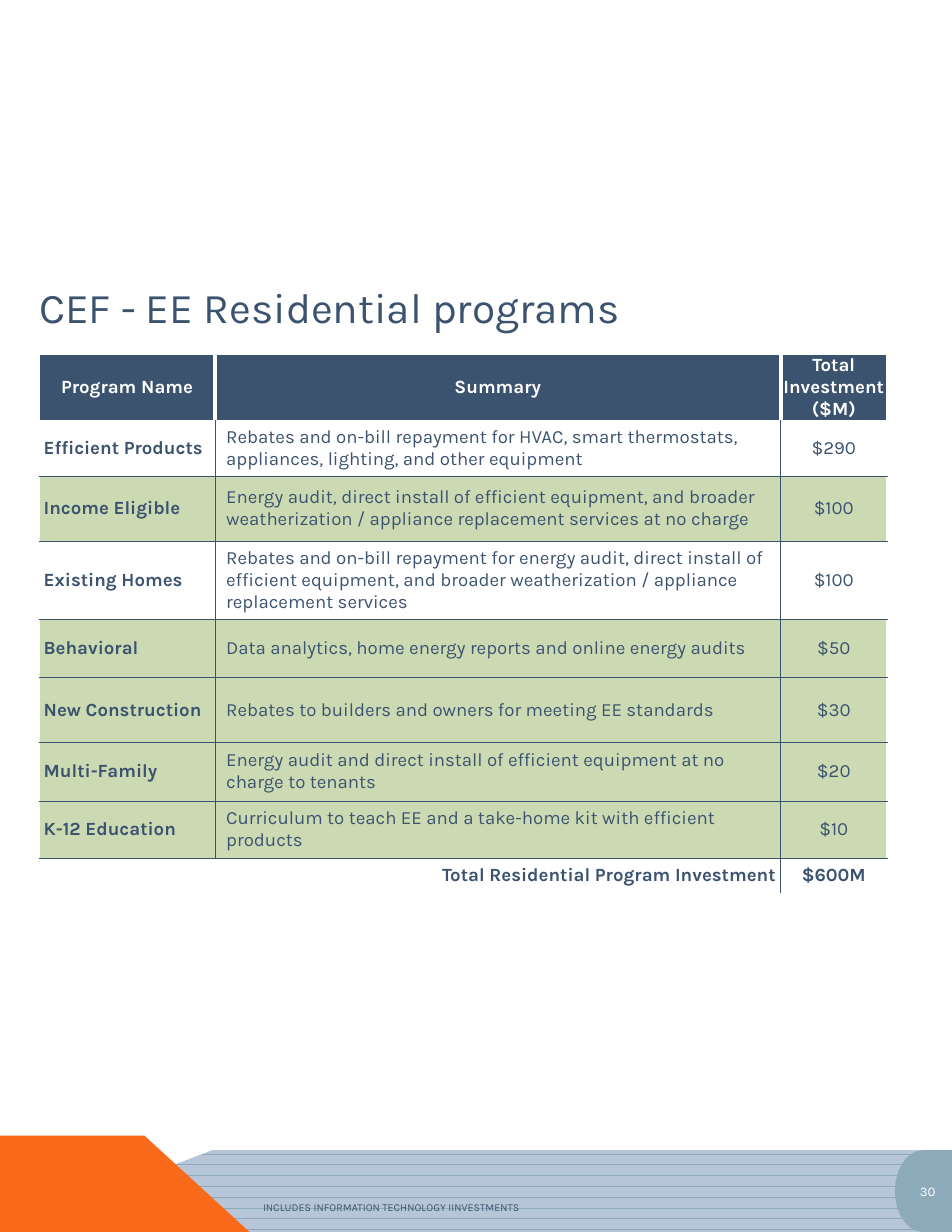
from lxml.etree import SubElement
from pptx import Presentation
from pptx.dml.color import RGBColor
from pptx.enum.dml import MSO_PATTERN
from pptx.enum.shapes import MSO_SHAPE
from pptx.enum.text import MSO_ANCHOR, PP_ALIGN
from pptx.oxml.ns import qn
from pptx.util import Inches, Pt

NAVY, WHITE, GREEN = "3C536F", "FFFFFF", "CCDAB3"
ORANGE, TEAL, PALE_BLUE = "F96A1B", "8CAABA", "B6C5D7"
LEFT, CENTER, RIGHT = PP_ALIGN.LEFT, PP_ALIGN.CENTER, PP_ALIGN.RIGHT


def color(hex_value):
    return RGBColor.from_string(hex_value)


def write(frame, text, size, hex_value=NAVY, bold=False, align=LEFT):
    frame.text = text
    frame.word_wrap = True
    for para in frame.paragraphs:
        para.alignment = align
        para.font.color.rgb = color(hex_value)
        for name, value in {"name": "Karla", "size": Pt(size), "bold": bold}.items():
            setattr(para.font, name, value)


deck = Presentation()
deck.slide_width, deck.slide_height = Inches(8.5), Inches(11)
page = deck.slides.add_slide(deck.slide_layouts[6])

# The page is a grid of 850 columns by 1100 rows
COL, ROW = deck.slide_width // 850, deck.slide_height // 1100

# Footer band and corner
footer_outlines = [
    [(0, 1100), (190, 1027), (850, 1027), (850, 1100)],
    [(0, 1102), (0, 1014), (129, 1014), (225, 1102)],
]
footer = []
for points in footer_outlines:
    builder = page.shapes.build_freeform(*points[0], scale=(COL, ROW))
    builder.add_line_segments(points[1:], close=True)
    shape = builder.convert_to_shape()
    shape.shadow.inherit = False
    shape.line.fill.background()
    footer.append(shape)
band, corner = footer
band.fill.patterned()
band.fill.pattern = MSO_PATTERN.DARK_HORIZONTAL
band.fill.fore_color.rgb = color(PALE_BLUE)
band.fill.back_color.rgb = color(TEAL)
corner.fill.solid()
corner.fill.fore_color.rgb = color(ORANGE)

# Page number tab
tab = page.shapes.add_shape(MSO_SHAPE.FLOWCHART_DELAY, 799 * COL, 1027 * ROW, 51 * COL, 73 * ROW)
tab.shadow.inherit = False
tab.fill.solid()
tab.fill.fore_color.rgb = color(TEAL)
tab.line.fill.background()
tab.element.spPr.find(qn("a:xfrm")).set("flipH", "1")
write(tab.text_frame, "30", 8.5, WHITE, align=CENTER)
tab.text_frame.vertical_anchor = MSO_ANCHOR.MIDDLE

# Title
title = page.shapes.add_textbox(35 * COL, 248 * ROW, 765 * COL, 51 * ROW)
write(title.text_frame, "CEF - EE Residential programs", 27.2)
title.text_frame.vertical_anchor = MSO_ANCHOR.MIDDLE
for side in ("left", "right", "top", "bottom"):
    setattr(title.text_frame, f"margin_{side}", 0)

# Program table
programs = [
    ("Program Name", "Summary", "Total\nInvestment\n($M)"),
    ("Efficient Products", "Rebates and on-bill repayment for HVAC, smart thermostats, "
     "appliances, lighting, and other equipment", "$290"),
    ("Income Eligible", "Energy audit, direct install of efficient equipment, and broader "
     "weatherization / appliance replacement services at no charge", "$100"),
    ("Existing Homes", "Rebates and on-bill repayment for energy audit, direct install of "
     "efficient equipment, and broader weatherization / appliance replacement services", "$100"),
    ("Behavioral", "Data analytics, home energy reports and online energy audits", "$50"),
    ("New Construction", "Rebates to builders and owners for meeting EE standards", "$30"),
    ("Multi-Family", "Energy audit and direct install of efficient equipment at no "
     "charge to tenants", "$20"),
    ("K-12 Education", "Curriculum to teach EE and a take-home kit with efficient products", "$10"),
    ("Total Residential Program Investment", "", "$600M"),
]
green_rows = {2, 4, 5, 6, 7}
column_widths = [157, 505, 95]
row_heights = [60, 49, 58, 70, 52, 58, 52, 51, 32]
last = len(programs) - 1

table = page.shapes.add_table(len(programs), 3, 35 * COL, 316 * ROW,
                              sum(column_widths) * COL, sum(row_heights) * ROW).table
table.first_row = table.horz_banding = False
for column, width in zip(table.columns, column_widths):
    column.width = width * COL
for row, height in zip(table.rows, row_heights):
    row.height = height * ROW
table.cell(last, 0).merge(table.cell(last, 1))

for r, texts in enumerate(programs):
    header, total = r == 0, r == last
    for c, text in enumerate(texts):
        cell = table.cell(r, c)
        if cell.is_spanned:
            continue

        # Text
        align = CENTER if header or c == 2 else RIGHT if total else LEFT
        write(cell.text_frame, text, 12, WHITE if header else NAVY,
              bold=header or total or c == 0, align=align)
        cell.vertical_anchor = MSO_ANCHOR.MIDDLE
        cell.margin_left = cell.margin_right = 0 if header else 4 * COL
        cell.margin_top = cell.margin_bottom = 0 if header else 3 * ROW
        if c == 1 and not header:
            cell.text_frame.paragraphs[0]._p.get_or_add_pPr().set("marL", str(6 * COL))

        # Borders
        upright = (WHITE, 3) if header else (NAVY, 0.25)
        borders = {
            "a:lnL": upright if c > 0 else None,
            "a:lnR": upright if c < 2 else None,
            "a:lnT": (NAVY, 0.25) if r > 1 else None,
            "a:lnB": None if header else (WHITE if total else NAVY, 0.25),
        }
        properties = cell._tc.get_or_add_tcPr()
        for edge, style in borders.items():
            if style:
                line = SubElement(properties, qn(edge), w=str(Pt(style[1])))
                SubElement(SubElement(line, qn("a:solidFill")), qn("a:srgbClr"), val=style[0])

        # Fill
        if header or r in green_rows:
            cell.fill.solid()
            cell.fill.fore_color.rgb = color(NAVY if header else GREEN)
        else:
            cell.fill.background()

# Footnote
note = page.shapes.add_textbox(225 * COL, 1067 * ROW, 255 * COL, 22 * ROW)
write(note.text_frame, "INCLUDES INFORMATION TECHNOLOGY IINVESTMENTS", 6.8)

deck.save("out.pptx")
